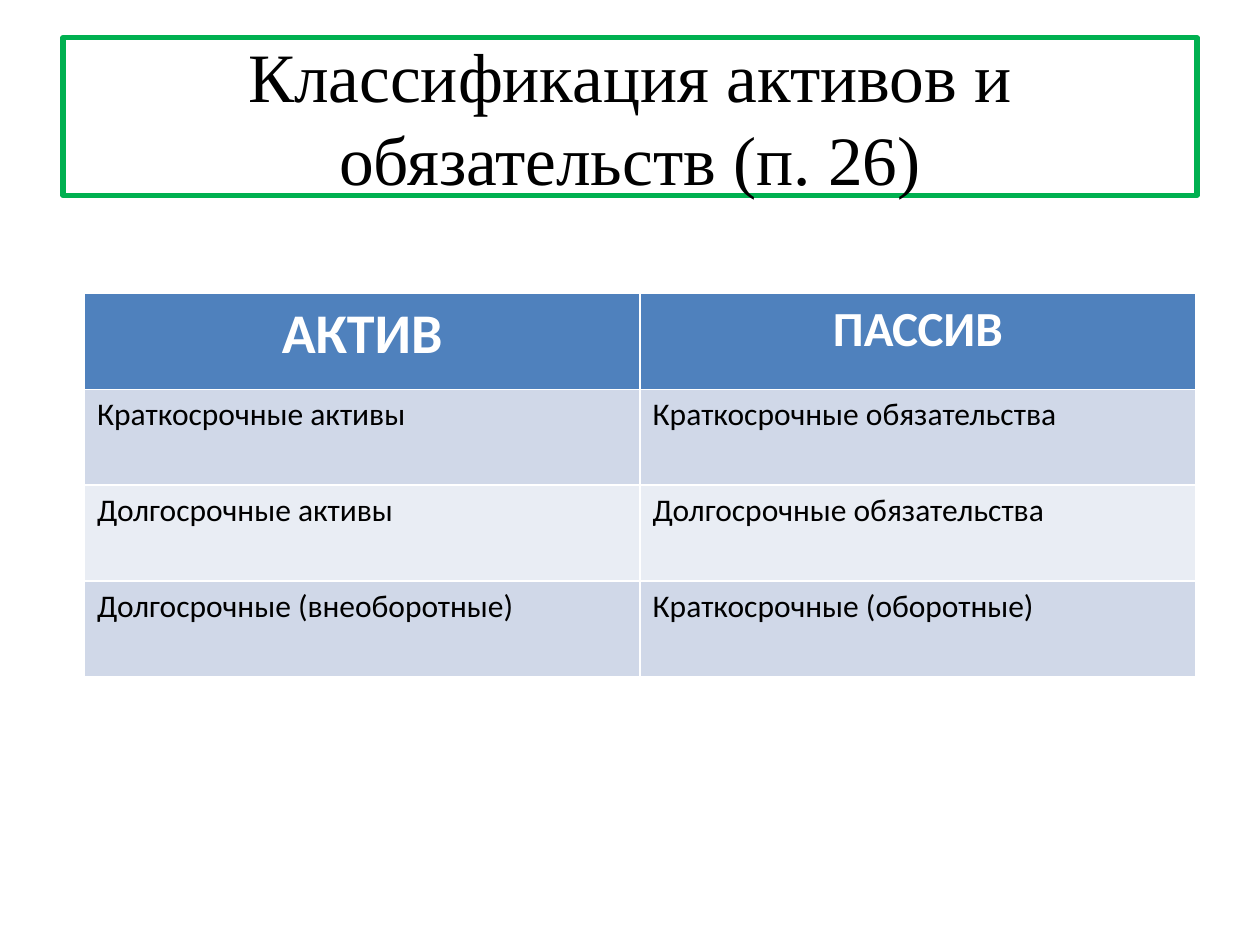
from pptx import Presentation
from pptx.dml.color import RGBColor
from pptx.enum.shapes import MSO_SHAPE
from pptx.enum.text import MSO_ANCHOR, PP_ALIGN
from pptx.util import Inches, Pt

RECTANGLE = MSO_SHAPE.RECTANGLE
MIDDLE = MSO_ANCHOR.MIDDLE
CENTER = PP_ALIGN.CENTER
LEFT = PP_ALIGN.LEFT

GREEN = RGBColor(0x00, 0xB0, 0x50)
BLUE = RGBColor(0x4F, 0x81, 0xBD)
BAND_DARK = RGBColor(0xD0, 0xD8, 0xE8)
BAND_LIGHT = RGBColor(0xE9, 0xED, 0xF4)
BLACK = RGBColor(0x00, 0x00, 0x00)
WHITE = RGBColor(0xFF, 0xFF, 0xFF)

HEADINGS = [("АКТИВ", 32), ("ПАССИВ", 28)]
BALANCE_ROWS = [
    ("Краткосрочные активы", "Краткосрочные обязательства"),
    ("Долгосрочные активы", "Долгосрочные обязательства"),
    ("Долгосрочные (внеоборотные)", "Краткосрочные (оборотные)"),
]


class SlideBuilder:
    title_font = "Times New Roman"
    body_font = "Calibri"
    body_size = 18

    def __init__(self, slide):
        self.slide = slide

    def set_text(self, frame, text, font, size, color, align, bold=False):
        frame.text = text
        paragraph = frame.paragraphs[0]
        paragraph.alignment = align
        style = paragraph.runs[0].font
        style.name = font
        style.size = Pt(size)
        style.bold = bold
        style.color.rgb = color

    def title(self, text, left, top, width, height):
        banner = self.slide.shapes.add_shape(
            RECTANGLE, Inches(left), Inches(top), Inches(width), Inches(height))
        banner.shadow.inherit = False
        banner.fill.background()
        banner.line.color.rgb = GREEN
        banner.line.width = Pt(3)
        frame = banner.text_frame
        frame.word_wrap = True
        frame.vertical_anchor = MIDDLE
        self.set_text(frame, text, self.title_font, 39.6, BLACK, CENTER)

    def cell(self, cell, text, size, color, fill, align, bold=False):
        cell.fill.solid()
        cell.fill.fore_color.rgb = fill
        self.set_text(cell.text_frame, text, self.body_font, size, color, align, bold)

    def table(self, headings, rows, left, top, width, height):
        balance = self.slide.shapes.add_table(
            len(rows) + 1, len(headings),
            Inches(left), Inches(top), Inches(width), Inches(height)).table
        for column, (heading, size) in enumerate(headings):
            self.cell(balance.cell(0, column), heading, size, WHITE, BLUE, CENTER, True)
        for row, entries in enumerate(rows, start=1):
            band = BAND_DARK if row % 2 else BAND_LIGHT
            for column, entry in enumerate(entries):
                self.cell(balance.cell(row, column), entry, self.body_size,
                          BLACK, band, LEFT)


def main():
    presentation = Presentation()
    presentation.slide_width = Inches(10)
    presentation.slide_height = Inches(7.5)
    blank = presentation.slide_layouts[6]
    builder = SlideBuilder(presentation.slides.add_slide(blank))
    builder.title("Классификация активов и обязательств (п. 26)", 0.5, 0.3, 9, 1.25)
    builder.table(HEADINGS, BALANCE_ROWS, 0.67, 2.33, 8.82, 3.04)
    presentation.save("out.pptx")


if __name__ == "__main__":
    main()
